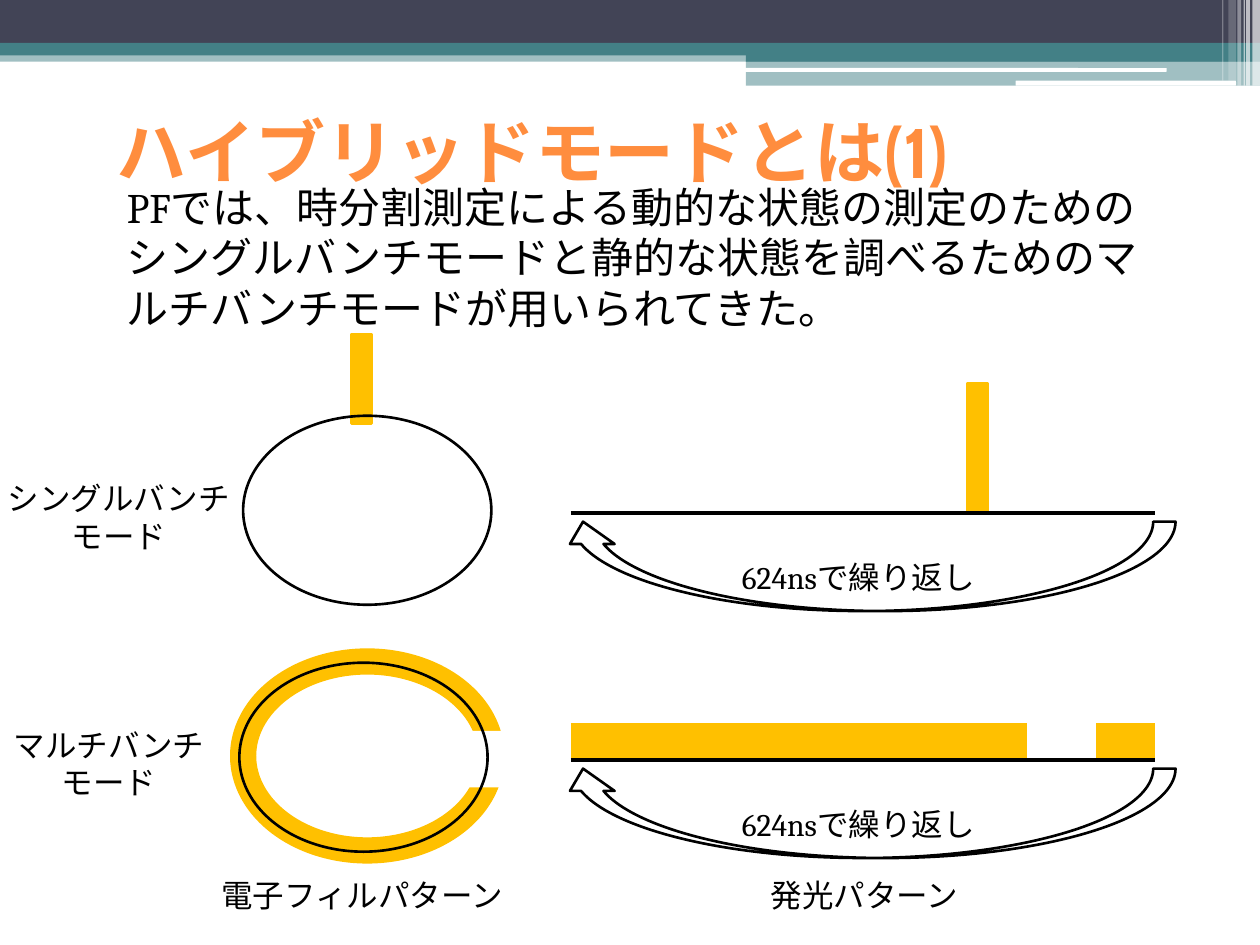
from lxml.etree import SubElement
from pptx import Presentation
from pptx.dml.color import RGBColor
from pptx.enum.shapes import MSO_CONNECTOR as LINK, MSO_SHAPE as SHAPE
from pptx.enum.text import MSO_ANCHOR as ANCHOR, PP_ALIGN as ALIGN
from pptx.oxml.ns import qn
from pptx.util import Inches, Pt

HUES = {"navy": "424456", "teal": "438086", "white": "FFFFFF",
        "gold": "FFC000", "black": "000000", "orange": "FF8D3E"}

# Banner parts: left, top, width, height, colour, opacity in percent
BANDS = [
    (0, 0.4, 10, 0.09, "teal", 50),
    (0, 0, 10, 0.34, "navy", 100),
    (0, 0.34, 10, 0.1, "teal", 100),
    (5.92, 0.39, 4.08, 0.1, "teal", 100),
    (5.92, 0.48, 4.08, 0.2, "teal", 50),
]
PILLS = [(5.91, 0.54, 3.35, 0.03), (8.06, 0.64, 1.75, 0.04)]
# Stripes at the right edge: left, width, height, opacity
STRIPES = [(9.94, 0.06, 0.68, 65), (9.89, 0.03, 0.68, 65),
           (9.87, 0.01, 0.68, 60), (9.82, 0.03, 0.68, 40),
           (9.75, 0.06, 0.64, 20), (9.7, 0.01, 0.64, 30)]

TITLE = "ハイブリッドモードとは(1)"
BODY = ("PFでは、時分割測定による動的な状態の測定のための"
        "シングルバンチモードと静的な状態を調べるための"
        "マルチバンチモードが用いられてきた。")
CYCLE = "624nsで繰り返し"
# Mode rows: label, label left, orbit left
MODES = [("シングルバンチ\nモード", -0.12, 1.93),
         ("マルチバンチ\nモード", -0.2, 1.9)]
FEET = [("電子フィルパターン", 1.66, 2.47), ("発光パターン", 6.02, 1.72)]

STEP = 1.96              # distance between the mode rows
ORBIT = (1.97, 1.5)      # width and height of the storage ring
AXIS = (4.53, 9.17)      # both ends of the time axis
BUNCHES = [(2.79, 2.65, 0.16, 0.71), (7.68, 3.04, 0.16, 1.02)]
TRAINS = [(4.53, 8.15), (8.7, 9.17)]

prs = Presentation()
prs.slide_width, prs.slide_height = Inches(10), Inches(7.5)
slide = prs.slides.add_slide(prs.slide_layouts[6])


def rgb(hue):
    return RGBColor.from_string(HUES[hue])


def add(kind, box, fill=None, alpha=100, line=None, width=1.5):
    item = slide.shapes.add_shape(kind, *map(Inches, box))
    item.shadow.inherit = False
    if fill:
        item.fill.solid()
        item.fill.fore_color.rgb = rgb(fill)
        if alpha < 100:
            tone = item.element.spPr.find(".//" + qn("a:srgbClr"))
            SubElement(tone, qn("a:alpha")).set("val", str(alpha * 1000))
    else:
        item.fill.background()
    if line:
        item.line.color.rgb = rgb(line)
        item.line.width = Pt(width)
    else:
        item.line.fill.background()
    return item


def rule(span, y, hue, width):
    """Draw a horizontal line."""
    left, right = map(Inches, span)
    item = slide.shapes.add_connector(
        LINK.STRAIGHT, left, Inches(y), right, Inches(y))
    item.line.color.rgb = rgb(hue)
    item.line.width = Pt(width)
    SubElement(item.element.spPr, qn("a:effectLst"))


def write(text, box, size=18, font="Cambria", hue="black", bold=False,
          align=ALIGN.LEFT, wrap=True, anchor=ANCHOR.TOP):
    frame = slide.shapes.add_textbox(*map(Inches, box)).text_frame
    frame.word_wrap = wrap
    frame.vertical_anchor = anchor
    frame.text = text
    for para in frame.paragraphs:
        para.alignment = align
        for run in para.runs:
            run.font.name, run.font.size = font, Pt(size)
            run.font.bold, run.font.color.rgb = bold, rgb(hue)


# Banner
for *box, hue, alpha in BANDS:
    add(SHAPE.RECTANGLE, box, hue, alpha)
for box in PILLS:
    add(SHAPE.ROUNDED_RECTANGLE, box, "white")
for left, width, height, alpha in STRIPES:
    add(SHAPE.RECTANGLE, (left, 0, width, height), "white", alpha)

write(BODY, (0.91, 1.39, 8.43, 1.62), 24)
write(TITLE, (0.83, 0.76, 9, 0.87), 40, "Cabin", "orange", True,
      anchor=ANCHOR.MIDDLE)

# Electron bunches: single ones, then the long train with its gap
for box in BUNCHES:
    add(SHAPE.RECTANGLE, box, "gold", line="gold")
add(SHAPE.OVAL, (1.93, 5.25, *ORBIT), line="gold", width=15)
add(SHAPE.RECTANGLE, (3.35, 5.8, 0.87, 0.45), "white")
for span in TRAINS:
    rule(span, 5.88, "gold", 20)

# Orbit, time axis and return arrow of each mode
for i, (label, left, ring) in enumerate(MODES):
    down = i * STEP
    add(SHAPE.OVAL, (ring, 3.3 + down, *ORBIT), line="black")
    rule(AXIS, 4.07 + down, "black", 2)
    arrow = add(SHAPE.CURVED_UP_ARROW, (4.45, 4.14 + down, 4.88, 0.71),
                line="black")
    arrow.element.spPr.find(qn("a:xfrm")).set("flipH", "1")
    write(CYCLE, (5.79, 4.38 + down, 2.13, 0.4))
    write(label, (left, 3.75 + down, 2.13, 0.71), align=ALIGN.CENTER)

for text, left, width in FEET:
    write(text, (left, 6.9, width, 0.4), wrap=False)

prs.save("out.pptx")
